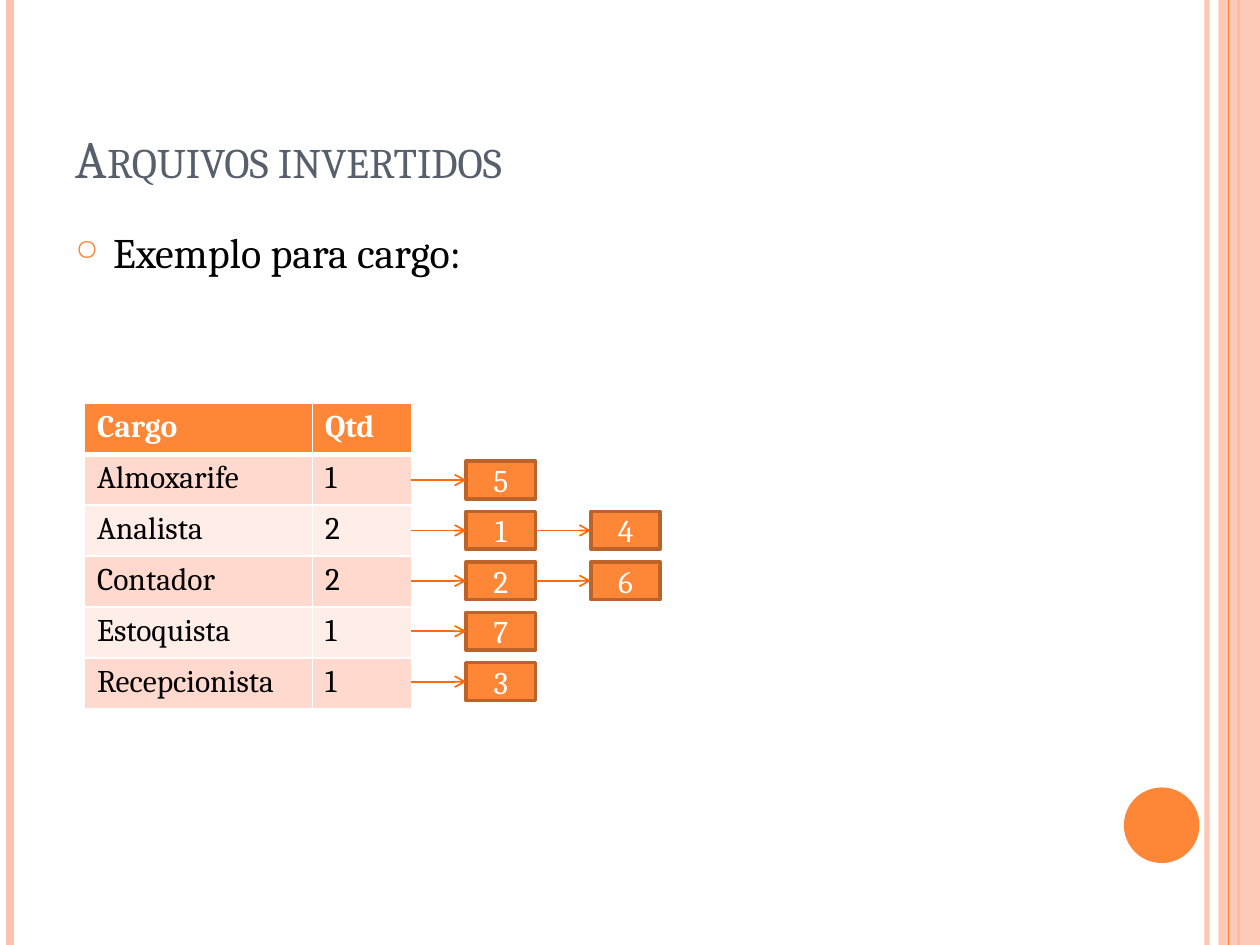
from dataclasses import dataclass

from lxml.etree import SubElement
from pptx import Presentation
from pptx.dml.color import RGBColor
from pptx.enum.shapes import MSO_CONNECTOR, MSO_SHAPE
from pptx.enum.text import MSO_ANCHOR, PP_ALIGN
from pptx.oxml import parse_xml
from pptx.oxml.ns import nsdecls, qn
from pptx.util import Inches, Pt


@dataclass(frozen=True)
class Theme:
    """Colours, font and type sizes of the slide."""
    font: str = "Cambria"
    title: str = "575F6D"
    text: str = "000000"
    white: str = "FFFFFF"
    accent: str = "FE8637"
    pale: str = "FEC3AE"
    border: str = "BC6329"
    arrow: str = "FF6B0A"
    bands: tuple = ("FFD9CE", "FFEDE8")
    title_size: int = 30
    body_size: int = 24
    cell_size: int = 18


class Builder:
    """Draws styled elements on the current slide."""

    def __init__(self, s, theme):
        self.s, self.theme = s, theme

    def set_attrs(self, obj, values):
        """Set each named attribute on an object."""
        for name, value in values.items():
            setattr(obj, name, value)

    def add_text(self, tf, text, size, color, bold=False, align=PP_ALIGN.LEFT):
        """Add one formatted run and return its paragraph and run."""
        p = tf.paragraphs[0]
        p.alignment = align
        r = p.add_run()
        r.text = text
        self.set_attrs(r.font, {"name": self.theme.font, "size": Pt(size), "bold": bold})
        r.font.color.rgb = RGBColor.from_string(color)
        return p, r

    def fade(self, sp, alpha):
        """Give the first colour of a shape an opacity in percent."""
        color = sp._element.spPr.find(".//" + qn("a:srgbClr"))
        SubElement(color, qn("a:alpha"), val=str(alpha * 1000))

    def title(self, text, left, top, width, height):
        """Place the title in small capitals."""
        sp = self.s.shapes.title
        self.set_attrs(sp, {"left": Inches(left), "top": Inches(top),
                            "width": Inches(width), "height": Inches(height)})
        self.set_attrs(sp.text_frame, {"vertical_anchor": MSO_ANCHOR.BOTTOM, "word_wrap": True})
        _, r = self.add_text(sp.text_frame, text, self.theme.title_size, self.theme.title)
        r._r.get_or_add_rPr().set("cap", "small")

    def bullet(self, text, left, top, width, height):
        """Add a text box with one bulleted paragraph."""
        tf = self.s.shapes.add_textbox(*map(Inches, (left, top, width, height))).text_frame
        tf.word_wrap = True
        p, _ = self.add_text(tf, text, self.theme.body_size, self.theme.text)
        p.space_before = Pt(6)
        pPr = p._p.get_or_add_pPr()
        for name, value in (("marL", 0.3), ("indent", -0.3)):
            pPr.set(name, str(Inches(value)))
        color = SubElement(pPr, qn("a:buClr"))
        SubElement(color, qn("a:srgbClr"), val=self.theme.accent)
        SubElement(pPr, qn("a:buSzPct"), val="70000")
        SubElement(pPr, qn("a:buChar"), char="○")

    def shape(self, kind, left, top, width, height, fill, line=None, alpha=None):
        """Add a flat preset shape."""
        sp = self.s.shapes.add_shape(kind, *map(Inches, (left, top, width, height)))
        sp.shadow.inherit = False
        sp.fill.solid()
        sp.fill.fore_color.rgb = RGBColor.from_string(fill)
        if alpha:
            self.fade(sp, alpha)
        if line:
            sp.line.color.rgb = RGBColor.from_string(line)
            sp.line.width = Pt(2)
        else:
            sp.line.fill.background()
        return sp

    def node(self, text, left, top, width, height):
        """Add a numbered box."""
        t = self.theme
        tf = self.shape(MSO_SHAPE.RECTANGLE, left, top, width, height, t.accent, t.border).text_frame
        self.set_attrs(tf, {"vertical_anchor": MSO_ANCHOR.MIDDLE, "word_wrap": True})
        self.add_text(tf, text, t.cell_size, t.white, align=PP_ALIGN.CENTER)

    def line(self, x1, y1, x2, y2, color, width, alpha=None, arrow=False):
        """Add a straight line, with an optional arrowhead at its end."""
        sp = self.s.shapes.add_connector(MSO_CONNECTOR.STRAIGHT, *map(Inches, (x1, y1, x2, y2)))
        sp.line.color.rgb = RGBColor.from_string(color)
        sp.line.width = Pt(width)
        spPr = sp._element.spPr
        if alpha:
            self.fade(sp, alpha)
        if arrow:
            SubElement(spPr.find(qn("a:ln")), qn("a:tailEnd"), type="arrow")
        SubElement(spPr, qn("a:effectLst"))

    def cell(self, cell, text, fill, color, header):
        """Fill, border and label one table cell."""
        cell.fill.solid()
        cell.fill.fore_color.rgb = RGBColor.from_string(fill)
        tcPr = cell._tc.get_or_add_tcPr()
        for i, side in enumerate("LRTB"):
            width = Pt(3 if header and side == "B" else 1)
            tcPr.insert(i, parse_xml(
                f'<a:ln{side} {nsdecls("a")} w="{width}"><a:solidFill>'
                f'<a:srgbClr val="{self.theme.white}"/></a:solidFill></a:ln{side}>'))
        self.add_text(cell.text_frame, text, self.theme.cell_size, color, header)

    def table(self, rows, left, top, widths, height):
        """Add a table with a header and alternating bands."""
        t = self.theme
        box = map(Inches, (left, top, sum(widths), height))
        table = self.s.shapes.add_table(len(rows), len(widths), *box).table
        for column, width in zip(table.columns, widths):
            column.width = Inches(width)
        for i, row in enumerate(rows):
            fill, color = (t.bands[(i - 1) % 2], t.text) if i else (t.accent, t.white)
            for j, text in enumerate(row):
                self.cell(table.cell(i, j), text, fill, color, i == 0)


def main():
    """Build and save the slide."""
    prs = Presentation()
    prs.slide_width, prs.slide_height = Inches(10), Inches(7.5)
    t = Theme()
    b = Builder(prs.slides.add_slide(prs.slide_layouts[5]), t)

    b.line(9.58, 0, 9.58, 7.5, t.pale, 3, alpha=93)
    b.line(0.08, 0, 0.08, 7.5, t.pale, 4.5)
    b.line(9.83, 0, 9.83, 7.5, t.accent, 1.5)
    b.shape(MSO_SHAPE.RECTANGLE, 9.67, 0, 0.33, 7.5, t.pale, alpha=87)
    b.line(9.75, 0, 9.75, 7.5, t.accent, 0.75)
    b.shape(MSO_SHAPE.OVAL, 8.92, 6.25, 0.6, 0.6, t.accent)

    b.title("Arquivos invertidos", 0.5, 0.3, 8.17, 1.25)
    b.bullet("Exemplo para cargo:", 0.5, 1.75, 8.17, 0.74)

    index = {"Almoxarife": "5", "Analista": "14", "Contador": "26",
             "Estoquista": "7", "Recepcionista": "3"}
    rows = [("Cargo", "Qtd")] + [(job, str(len(ids))) for job, ids in index.items()]
    b.table(rows, 0.67, 3.2, (1.81, 0.79), 2.43)

    width, height, gap, pitch = 0.55, 0.3, 0.44, 0.4
    for i, ids in enumerate(index.values()):
        top = 3.66 + i * pitch
        middle = top + height / 2
        for j, number in enumerate(ids):
            left = 3.7 + j * (width + gap)
            b.node(number, left, top, width, height)
            b.line(left - gap, middle, left, middle, t.arrow, 1, arrow=True)
    prs.save("out.pptx")


if __name__ == "__main__":
    main()
